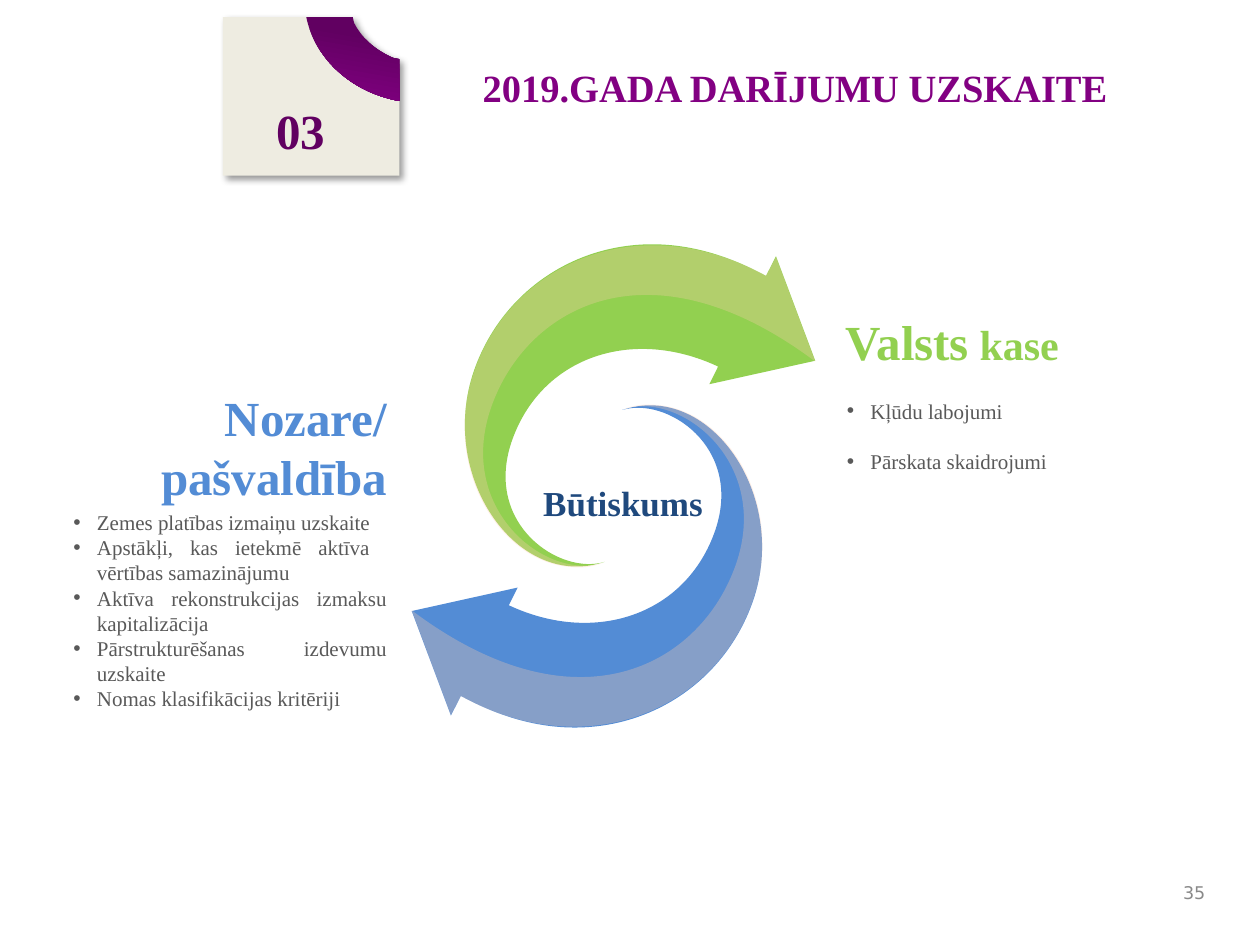
from lxml.etree import SubElement
from pptx import Presentation
from pptx.dml.color import RGBColor
from pptx.enum.text import MSO_ANCHOR, PP_ALIGN
from pptx.oxml.ns import qn
from pptx.util import Pt

THEME = {
    "serif": "Times New Roman", "sans": "DejaVu Sans",
    "plum": "610061", "purple": "820082", "paper": "EEECE1", "navy": "1F497D",
    "blue": "538CD5", "green": "92D050", "peach": "FFCDAD",
    "body": "595959", "gray": "898989", "black": "000000",
    "head": 28, "subhead": 24, "title": 22, "center": 20, "text": 12, "page": 10,
}

TITLE = "2019.GADA DARĪJUMU UZSKAITE"
SECTION, CENTER, PAGE = "03", "Būtiskums", "35"
SECTOR = "Nozare/ pašvaldība"
SECTOR_ITEMS = [
    "Zemes platības izmaiņu uzskaite",
    "Apstākļi, kas ietekmē aktīva  vērtības samazinājumu",
    "Aktīva rekonstrukcijas izmaksu kapitalizācija",
    "Pārstrukturēšanas izdevumu uzskaite",
    "Nomas klasifikācijas kritēriji",
]
TREASURY = ("Valsts", " kase")
TREASURY_ITEMS = ["Kļūdu labojumi", "Pārskata skaidrojumi"]

NOTCH = [(201.6, 9.8), (202.3, 13), (206.6, 21.6, 214.6, 28.8, 224.6, 33.1), (228.2, 33.8)]
BADGE = [(127.4, 9.8), *NOTCH, (228.2, 100.4), (127.4, 100.4)]
CORNER = [(175, 9.8), *NOTCH, (228.2, 57.6), (227.5, 57.6),
          (200.9, 52.6, 180, 33.8, 175, 9.8)]
ARROW = [
    (369.4, 139.7), (391, 139, 414, 144.7, 437.8, 157.7), (443.5, 146.5),
    (465.9, 206.2), (405.4, 219.6), (410.4, 209.5),
    (361.4, 186.5, 308.9, 203.8, 292.3, 252.7),
    (276.5, 300.2, 320.4, 329, 345.6, 321.1),
    (296.6, 337.7, 251.3, 274.3, 270, 214.6),
    (283.7, 171.4, 322.6, 141.1, 369.4, 139.7),
]
SHADE = [
    (326.2, 324), (285.1, 321.1, 253.4, 267.1, 270, 215.3),
    (289.4, 152.6, 362.9, 116.6, 437.8, 157.7), (443.5, 146.9), (465.9, 206.6),
    (373.7, 137.5, 305.3, 173.5, 283, 226.8),
    (257, 288, 310.3, 331.9, 344.2, 321.8),
    (338.4, 324, 331.9, 324.7, 326.2, 324),
]
SWIRL_CENTER = (350.6, 277.7)
CURVE_STEPS = 24


def rgb(name):
    return RGBColor.from_string(THEME[name])


def flatten(outline):
    pts = []
    for seg in outline:
        if len(seg) == 2:
            pts.append(seg)
            continue
        ctrl = [pts[-1], seg[:2], seg[2:4], seg[4:]]
        for i in range(1, CURVE_STEPS + 1):
            t = i / CURVE_STEPS
            weights = ((1 - t) ** 3, 3 * t * (1 - t) ** 2, 3 * t * t * (1 - t), t ** 3)
            pts.append(tuple(sum(w * c[k] for w, c in zip(weights, ctrl)) for k in (0, 1)))
    return pts


def half_turn(outline):
    return [tuple(2 * SWIRL_CENTER[i % 2] - v for i, v in enumerate(seg)) for seg in outline]


def set_curves(sp, outline):
    route = next(sp._element.spPr.iter(qn("a:path")))
    for child in list(route):
        route.remove(child)
    for i, seg in enumerate(outline):
        tag = "a:moveTo" if i == 0 else "a:lnTo" if len(seg) == 2 else "a:cubicBezTo"
        step = SubElement(route, qn(tag))
        for x, y in zip(seg[::2], seg[1::2]):
            SubElement(step, qn("a:pt"), x=str(Pt(x) - sp.left), y=str(Pt(y) - sp.top))
    SubElement(route, qn("a:close"))


def add_outline(s, outline, color, alpha=None):
    pts = [(Pt(x), Pt(y)) for x, y in flatten(outline)]
    fb = s.shapes.build_freeform(*pts[0])
    fb.add_line_segments(pts[1:], close=True)
    sp = fb.convert_to_shape()
    set_curves(sp, outline)
    sp.shadow.inherit = False
    sp.line.fill.background()
    sp.fill.solid()
    sp.fill.fore_color.rgb = rgb(color)
    if alpha:
        clr = sp._element.spPr.find(qn("a:solidFill"))[0]
        SubElement(clr, qn("a:alpha"), val=str(alpha * 1000))
    return sp


def add_shadow(sp):
    effects = sp._element.spPr.find(qn("a:effectLst"))
    shadow = SubElement(effects, qn("a:outerShdw"), blurRad=str(Pt(4)), dist=str(Pt(3)),
                        dir="2700000", algn="tl", rotWithShape="0")
    clr = SubElement(shadow, qn("a:srgbClr"), val=THEME["black"])
    SubElement(clr, qn("a:alpha"), val="40000")


def add_bullet(p):
    pPr = p._p.get_or_add_pPr()
    pPr.set("marL", str(Pt(13.5)))
    pPr.set("indent", str(-Pt(13.5)))
    clr = SubElement(pPr, qn("a:buClr"))
    SubElement(clr, qn("a:srgbClr"), val=THEME["body"])
    SubElement(pPr, qn("a:buFont"), typeface="Arial")
    SubElement(pPr, qn("a:buChar"), char="•")


def add_text(s, paras, box, sizes, color, font="serif", bold=True, align=PP_ALIGN.LEFT,
             anchor=MSO_ANCHOR.TOP, inset=0, bullets=False, gap=0):
    tf = s.shapes.add_textbox(*map(Pt, box)).text_frame
    tf.word_wrap = True
    tf.vertical_anchor = anchor
    tf.margin_left = tf.margin_right = Pt(inset)
    tf.margin_top = tf.margin_bottom = Pt(3.6)
    for i, runs in enumerate(paras):
        p = tf.paragraphs[0] if i == 0 else tf.add_paragraph()
        if bullets:
            add_bullet(p)
        p.alignment = align
        if i and gap:
            p.space_before = Pt(gap)
        for text, size in zip(runs, sizes):
            r = p.add_run()
            r.text = text
            r.font.name = THEME[font]
            r.font.size = Pt(THEME[size])
            r.font.bold = bold
            r.font.color.rgb = rgb(color)


def add_list(s, items, box, gap=0):
    add_text(s, [[item] for item in items], box, ["text"], "body", bold=False,
             align=PP_ALIGN.JUSTIFY, bullets=True, gap=gap)


def main():
    """Build the slide on the recording of transactions in 2019."""
    prs = Presentation()
    prs.slide_width, prs.slide_height = Pt(720), Pt(540)
    s = prs.slides.add_slide(prs.slide_layouts[6])

    add_text(s, [[PAGE]], (662.8, 498.5, 33, 23.5), ["page"], "gray", font="sans", bold=False,
             align=PP_ALIGN.RIGHT, anchor=MSO_ANCHOR.MIDDLE, inset=7.2)

    add_shadow(add_outline(s, BADGE, "paper"))
    add_text(s, [[SECTION]], (150.5, 54, 42.5, 41), ["head"], "plum",
             align=PP_ALIGN.CENTER, anchor=MSO_ANCHOR.MIDDLE)
    fill = add_outline(s, CORNER, "plum").fill
    fill.gradient()
    fill.gradient_angle = 260
    for stop, color, pos in zip(fill.gradient_stops, ("plum", "purple"), (0.23, 1)):
        stop.color.rgb = rgb(color)
        stop.position = pos

    add_text(s, [[TITLE]], (275.8, 32.8, 362, 33.8), ["title"], "purple",
             anchor=MSO_ANCHOR.BOTTOM)
    add_text(s, [[CENTER]], (295.2, 271.4, 121.7, 31.7), ["center"], "navy",
             align=PP_ALIGN.CENTER)

    for color, turn in (("blue", half_turn), ("green", list)):
        add_outline(s, turn(ARROW), color)
        add_outline(s, turn(SHADE), "peach", alpha=30)

    add_text(s, [[SECTOR]], (41.8, 196.6, 179.3, 95.8), ["head"], "blue",
             align=PP_ALIGN.RIGHT, anchor=MSO_ANCHOR.BOTTOM)
    add_list(s, SECTOR_ITEMS, (41.9, 287.6, 179.3, 123.8))
    add_text(s, [TREASURY], (483.3, 162.7, 179.3, 52.6), ["head", "subhead"], "green",
             anchor=MSO_ANCHOR.BOTTOM)
    add_list(s, TREASURY_ITEMS, (483.9, 223.9, 179.3, 51.1), gap=14.4)

    prs.save("out.pptx")


if __name__ == "__main__":
    main()
